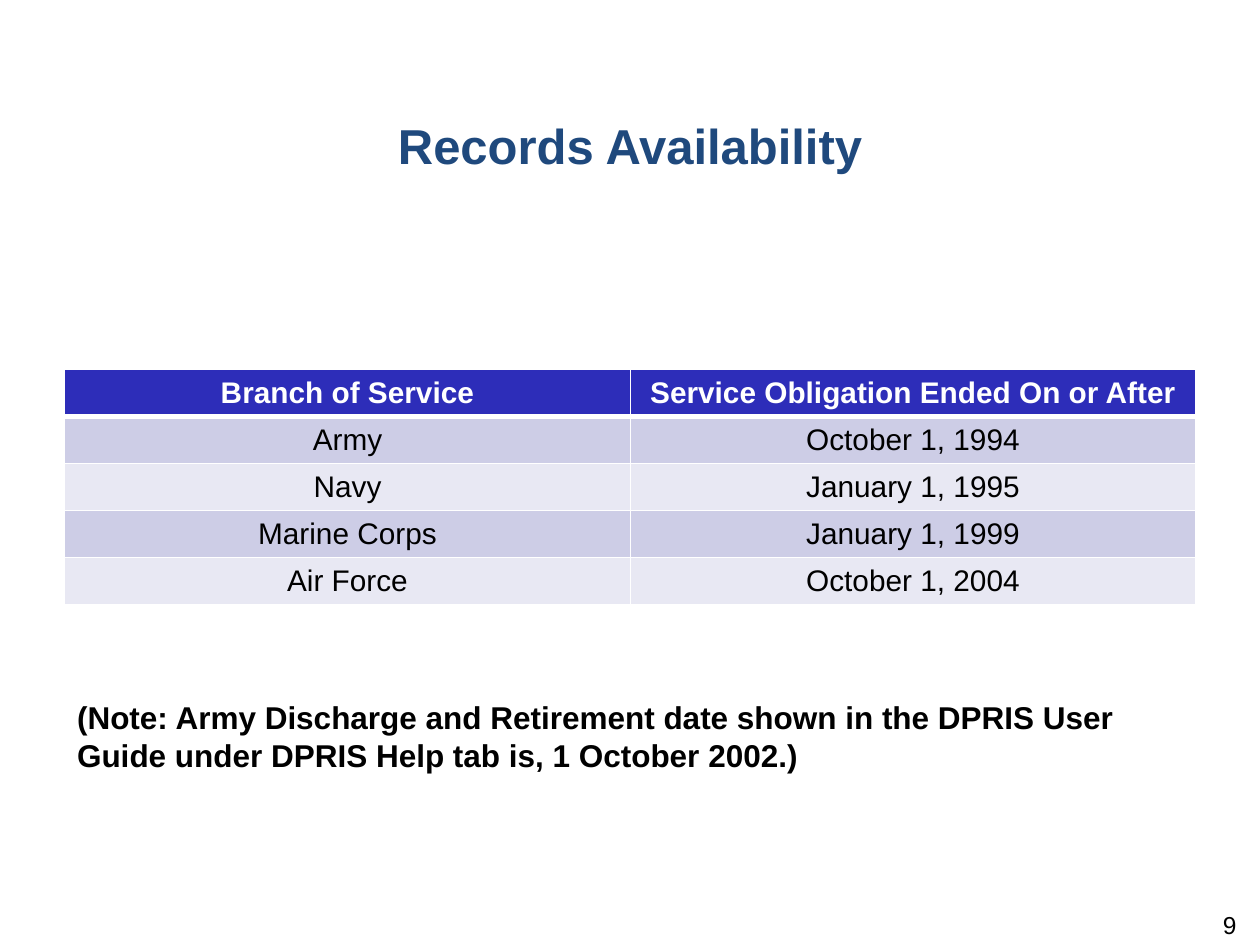
from lxml.etree import SubElement
from pptx import Presentation
from pptx.dml.color import RGBColor
from pptx.enum.text import MSO_ANCHOR, PP_ALIGN
from pptx.oxml.ns import qn
from pptx.util import Pt

NAVY = RGBColor(0x1F, 0x49, 0x7D)
HEADER_BLUE = RGBColor(0x2D, 0x2D, 0xB9)
BAND_DARK = RGBColor(0xCD, 0xCD, 0xE6)
BAND_LIGHT = RGBColor(0xE8, 0xE8, 0xF3)
WHITE = RGBColor(0xFF, 0xFF, 0xFF)
BLACK = RGBColor(0, 0, 0)


def write(text_frame, text, size, color, bold=False, alignment=PP_ALIGN.LEFT):
    text_frame.word_wrap = True
    paragraph = text_frame.paragraphs[0]
    paragraph.alignment = alignment
    run = paragraph.add_run()
    run.text = text
    run.font.name = "Arial"
    run.font.size = Pt(size)
    run.font.bold = bold
    run.font.color.rgb = color


def add_border(cell, side, width):
    line = SubElement(cell._tc.get_or_add_tcPr(), qn(f"a:ln{side}"), w=str(Pt(width)))
    fill = SubElement(line, qn("a:solidFill"))
    SubElement(fill, qn("a:srgbClr"), val=str(WHITE))


presentation = Presentation()
presentation.slide_width = Pt(720)
presentation.slide_height = Pt(540)
slide = presentation.slides.add_slide(presentation.slide_layouts[5])

# Title
title = slide.shapes.title
title.left, title.top, title.width, title.height = Pt(0), Pt(62.6), Pt(720), Pt(85.7)
title.text_frame.vertical_anchor = MSO_ANCHOR.TOP
write(title.text_frame, "Records Availability", 28, NAVY, True, PP_ALIGN.CENTER)

# Page number
page_number = slide.shapes.add_textbox(Pt(545.8), Pt(519.8), Pt(167.8), Pt(28.8))
page_number.text_frame.margin_top = Pt(0)
write(page_number.text_frame, "9", 14, BLACK, alignment=PP_ALIGN.RIGHT)

# Table of branches and dates
records = [
    ("Branch of Service", "Service Obligation Ended On or After"),
    ("Army", "October 1, 1994"),
    ("Navy", "January 1, 1995"),
    ("Marine Corps", "January 1, 1999"),
    ("Air Force", "October 1, 2004"),
]
table = slide.shapes.add_table(
    len(records), 2, Pt(37), Pt(211.2), Pt(646.4), Pt(134.5)
).table
for row_index, record in enumerate(records):
    is_header = row_index == 0
    if is_header:
        fill_color = HEADER_BLUE
    else:
        fill_color = BAND_DARK if row_index % 2 else BAND_LIGHT
    for column_index, text in enumerate(record):
        cell = table.cell(row_index, column_index)
        cell.vertical_anchor = MSO_ANCHOR.MIDDLE
        cell.margin_left = cell.margin_right = Pt(6.5)
        cell.margin_top = cell.margin_bottom = Pt(3)
        add_border(cell, "L", 1)
        add_border(cell, "R", 1)
        add_border(cell, "T", 3 if row_index == 1 else 1)
        add_border(cell, "B", 3 if is_header else 1)
        cell.fill.solid()
        cell.fill.fore_color.rgb = fill_color
        write(cell.text_frame, text, 17, WHITE if is_header else BLACK,
              is_header, PP_ALIGN.CENTER)

# Note below the table
note = slide.shapes.add_textbox(Pt(37), Pt(395.3), Pt(646.4), Pt(72.7))
write(
    note.text_frame,
    "(Note: Army Discharge and Retirement date shown in the DPRIS User Guide "
    "under DPRIS Help tab is, 1 October 2002.)",
    18, BLACK, True,
)

presentation.save("out.pptx")
